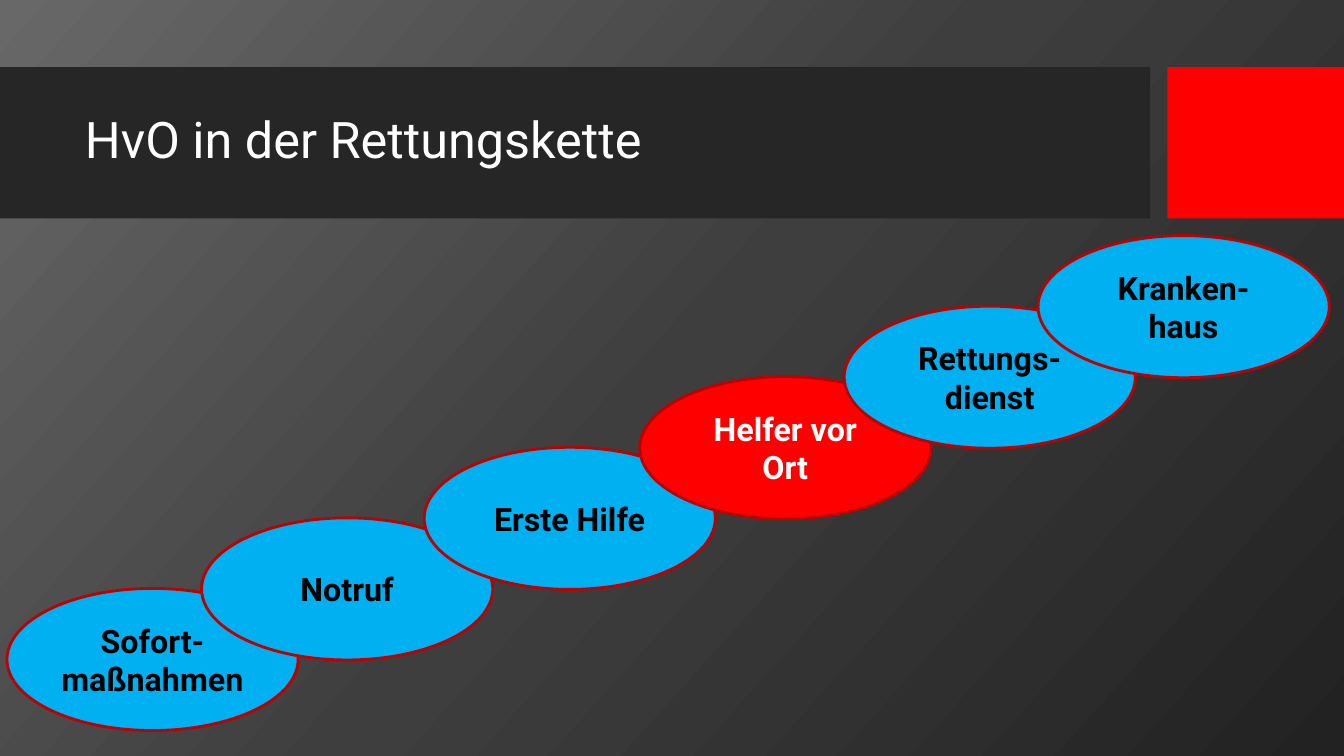
"""Build the slide on the first responder's place in the rescue chain."""
from copy import deepcopy

from pptx import Presentation
from pptx.dml.color import RGBColor
from pptx.enum.shapes import MSO_SHAPE
from pptx.enum.text import MSO_ANCHOR, PP_ALIGN
from pptx.oxml.ns import qn
from pptx.util import Pt

HEADING = "HvO in der Rettungskette"
FONT = "Roboto"
RED, BLUE, OUTLINE = "FF0000", "00B0F0", "BD0000"
BLACK, WHITE = "000000", "FFFFFF"
BACKGROUND = [(0, "686868"), (0.5, "3E3E3E"), (1, "222222")]
BANDS = [(0, 821.5, "262626"), (833.8, 126.2, RED)]
BAND_TOP, BAND_HEIGHT = 48, 108
LINKS = [
    ("Sofort-maßnahmen", 5, BLUE, BLACK),
    ("Notruf", 144, BLUE, BLACK),
    ("Erste Hilfe", 303, BLUE, BLACK),
    ("Helfer vor Ort", 457, RED, WHITE),
    ("Rettungs-dienst", 603, BLUE, BLACK),
    ("Kranken-haus", 741.5, BLUE, BLACK),
]
LINK_WIDTH, LINK_HEIGHT = 208, 101.5
FIRST_TOP, RISE = 420.3, 50.4


def color(hex_string):
    return RGBColor.from_string(hex_string)


def add_filled(slide, preset, left, top, width, height, fill):
    shape = slide.shapes.add_shape(preset, Pt(left), Pt(top), Pt(width), Pt(height))
    shape.shadow.inherit = False
    shape.fill.solid()
    shape.fill.fore_color.rgb = color(fill)
    shape.line.fill.background()
    return shape


def write(shape, text, size, ink, align, bold=False):
    frame = shape.text_frame
    frame.text = text
    frame.word_wrap = True
    frame.vertical_anchor = MSO_ANCHOR.MIDDLE
    paragraph = frame.paragraphs[0]
    paragraph.alignment = align
    font = paragraph.runs[0].font
    font.name, font.size, font.bold = FONT, Pt(size), bold
    font.color.rgb = color(ink)
    return paragraph


def paint_background(slide):
    fill = slide.background.fill
    fill.gradient()
    fill.gradient_angle = 318
    stops = next(slide.element.iter(qn("a:gsLst")))
    stops.insert(1, deepcopy(stops[0]))
    for stop, (position, shade) in zip(fill.gradient_stops, BACKGROUND):
        stop.position = position
        stop.color.rgb = color(shade)


def add_heading(slide):
    for left, width, fill in BANDS:
        add_filled(slide, MSO_SHAPE.RECTANGLE, left, BAND_TOP, width, BAND_HEIGHT, fill)
    title = slide.shapes.title
    title.left, title.top, title.width, title.height = Pt(53.5), Pt(59), Pt(757), Pt(85)
    write(title, HEADING, 36, WHITE, PP_ALIGN.LEFT).line_spacing = 0.9
    title.element.getparent().append(title.element)


def add_chain(slide):
    for step, (label, left, fill, ink) in enumerate(LINKS):
        link = add_filled(slide, MSO_SHAPE.OVAL, left, FIRST_TOP - step * RISE,
                          LINK_WIDTH, LINK_HEIGHT, fill)
        link.line.color.rgb = color(OUTLINE)
        link.line.width = Pt(2)
        write(link, label, 23, ink, PP_ALIGN.CENTER, bold=True)


def main():
    deck = Presentation()
    deck.slide_width, deck.slide_height = Pt(960), Pt(540)
    slide = deck.slides.add_slide(deck.slide_layouts[5])
    paint_background(slide)
    add_heading(slide)
    add_chain(slide)
    deck.save("out.pptx")


if __name__ == "__main__":
    main()
